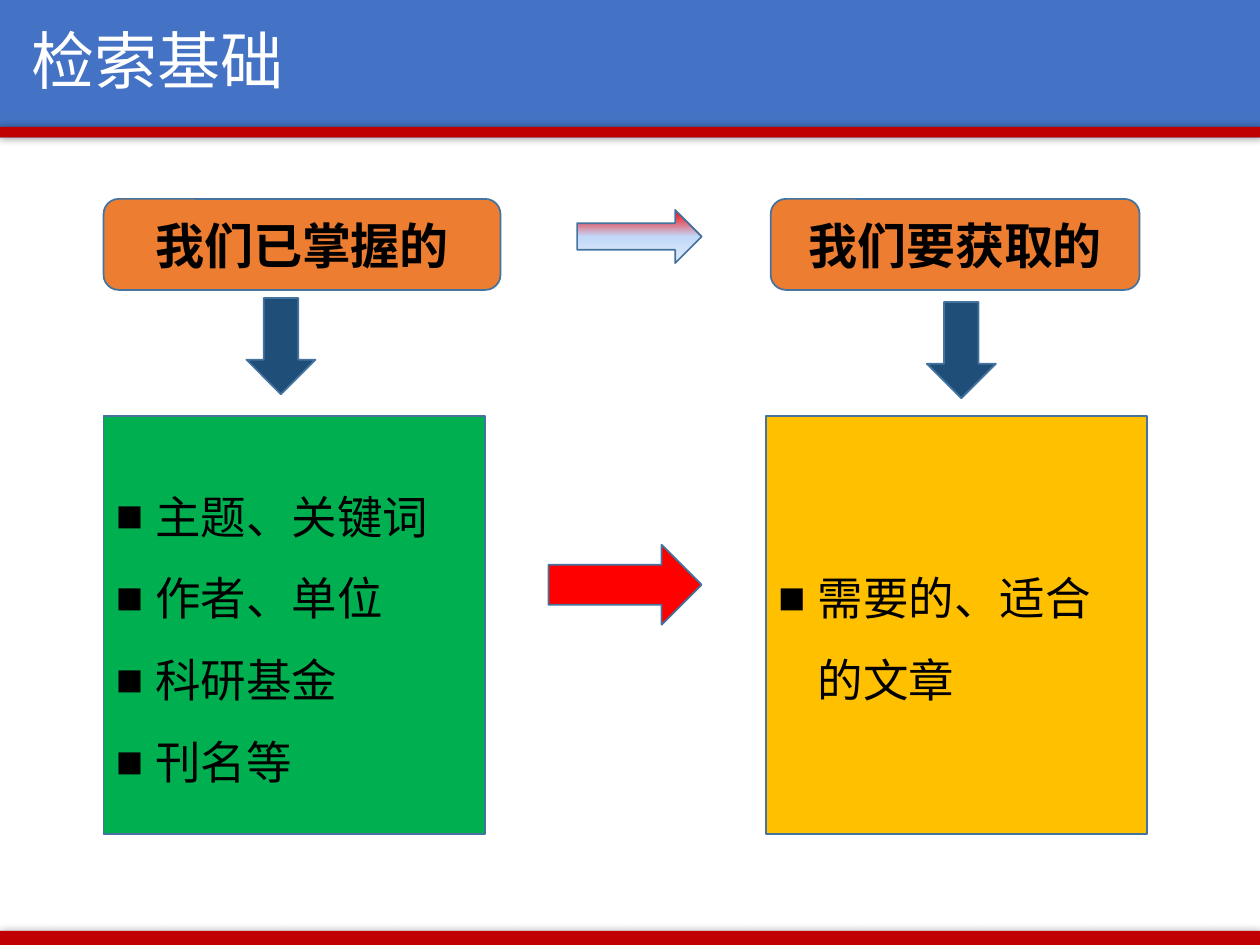
from copy import deepcopy
from pptx import Presentation
from pptx.dml.color import RGBColor
from pptx.enum import shapes as es, text as et
from pptx.oxml import parse_xml
from pptx.oxml.ns import nsdecls, qn
from pptx.util import Pt

KIND = es.MSO_SHAPE
CJK = "Noto Sans CJK SC"
EDGE = "43739E"
RED = "C00000"


def rgb(code):
    return RGBColor.from_string(code)


def node(tag, attrs="", body=""):
    return parse_xml(f'<a:{tag} {nsdecls("a")} {attrs}>{body}</a:{tag}>')


def draw(slide, kind, box, fill, line=EDGE):
    shape = slide.shapes.add_shape(kind, *map(Pt, box))
    shape.shadow.inherit = False
    shape.fill.solid()
    shape.fill.fore_color.rgb = rgb(fill)
    if line:
        shape.line.color.rgb = rgb(line)
        shape.line.width = Pt(1)
    else:
        shape.line.fill.background()
    return shape


def write(para, words, size, color="000000", face="Calibri", bold=False):
    run = para.add_run()
    run.text = words
    font = run.font
    font.size, font.bold, font.name = Pt(size), bold, face
    font.color.rgb = rgb(color)
    run._r.get_or_add_rPr().find(qn("a:latin")).addnext(
        node("ea", f'typeface="{CJK}"'))


def frame(shape):
    """Ready a wrapped, vertically centred text frame."""
    area = shape.text_frame
    area.word_wrap = True
    area.vertical_anchor = et.MSO_ANCHOR.MIDDLE
    return area


def add_bar(slide, box):
    """Red bar with a soft glow of shadow."""
    bar = draw(slide, KIND.RECTANGLE, box, RED, None)
    glow = '<a:srgbClr val="000000"><a:alpha val="40000"/></a:srgbClr>'
    bar._element.spPr.find(qn("a:effectLst")).append(
        node("outerShdw", f'blurRad="{Pt(5)}" dist="0" dir="0" rotWithShape="0"', glow))


def add_head(slide, box, title):
    x, y, w, h = box
    draw(slide, KIND.RECTANGLE, box, "4472C4", None)
    add_bar(slide, (x - 0.5, y + h - 6, w + 1, 6))
    label = slide.shapes.add_textbox(Pt(x + 10.8), Pt(y + 7.2), Pt(620), Pt(58.3))
    para = frame(label).paragraphs[0]
    para.line_spacing = 0.9
    write(para, title, 36, "FFFFFF", CJK)


def add_card(slide, box, words):
    card = draw(slide, KIND.ROUNDED_RECTANGLE, box, "ED7D31")
    para = frame(card).paragraphs[0]
    para.alignment = et.PP_ALIGN.CENTER
    write(para, words, 28, bold=True)


def add_list(slide, box, fill, items):
    area = frame(draw(slide, KIND.RECTANGLE, box, fill))
    for i, item in enumerate(items):
        para = area.add_paragraph() if i else area.paragraphs[0]
        para.alignment = et.PP_ALIGN.LEFT
        para.line_spacing = 1.5
        props = para._p.get_or_add_pPr()
        props.set("marL", str(Pt(22.5)))
        props.set("indent", str(-Pt(22.5)))
        props.append(node("buFont", 'typeface="Arial"'))
        props.append(node("buChar", 'char="■"'))
        write(para, item, 26)


def add_fade(slide, box, stops):
    """Right arrow shaded from top to bottom through three stops."""
    fill = draw(slide, KIND.RIGHT_ARROW, box, stops[0][1])
    shade = fill.fill
    shade.gradient()
    shade.gradient_angle = 270
    marks = fill._element.spPr.find(".//" + qn("a:gsLst"))
    marks.append(deepcopy(marks[0]))
    for stop, (place, color) in zip(shade.gradient_stops, stops):
        stop.position = place
        stop.color.rgb = rgb(color)


def add_side(slide, left, card, drop, fill, words, items):
    """Column: card on top, down arrow, list below."""
    add_card(slide, card, words)
    draw(slide, KIND.DOWN_ARROW, (*drop, 39.5, 55), "1F4E79")
    add_list(slide, (left, 237.6, 218, 239), fill, items)


def main():
    deck = Presentation()
    deck.slide_width, deck.slide_height = Pt(720), Pt(540)
    slide = deck.slides.add_slide(deck.slide_layouts[6])
    add_head(slide, (0, 0, 720, 78.5), "检索基础")
    add_bar(slide, (0, 532, 720.5, 8))
    add_side(slide, 59.2, (59.2, 113.7, 226.8, 52), (140.8, 170.3), "00B050",
             "我们已掌握的", ["主题、关键词", "作者、单位", "科研基金", "刊名等"])
    add_side(slide, 437.6, (440.4, 113.7, 210.8, 52), (529.6, 172.6), "FFC000",
             "我们要获取的", ["需要的、适合的文章"])
    add_fade(slide, (329.8, 120, 71.2, 30.4),
             [(0, "FF0000"), (0.5, "C2D8F8"), (1, "E1EBFB")])
    draw(slide, KIND.RIGHT_ARROW, (313.4, 311.3, 87.5, 45.7), "FF0000")
    deck.save("out.pptx")


if __name__ == "__main__":
    main()
